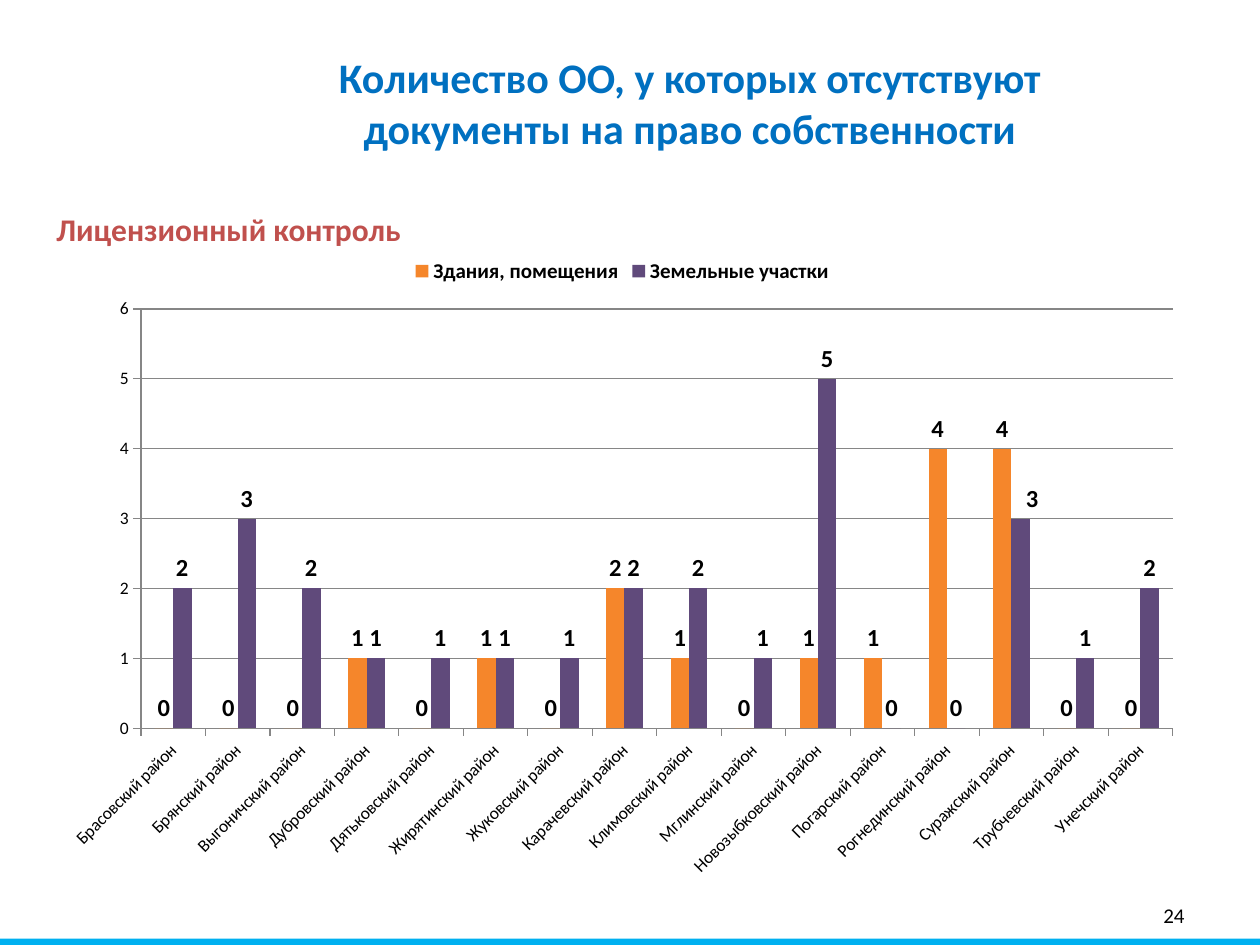
from lxml import etree
from pptx import Presentation
from pptx.chart.data import CategoryChartData
from pptx.dml.color import RGBColor
from pptx.enum.chart import (XL_CHART_TYPE, XL_LABEL_POSITION,
                             XL_LEGEND_POSITION, XL_TICK_MARK)
from pptx.enum.shapes import MSO_SHAPE
from pptx.enum.text import MSO_ANCHOR, PP_ALIGN
from pptx.oxml.ns import qn
from pptx.util import Inches, Pt

FONT = "Calibri"
BLACK = RGBColor(0x00, 0x00, 0x00)
BLUE = RGBColor(0x00, 0x70, 0xC0)
CYAN = RGBColor(0x00, 0xB0, 0xF0)
RED = RGBColor(0xC0, 0x50, 0x4D)
GREY = RGBColor(0x86, 0x86, 0x86)
ORANGE = RGBColor(0xF5, 0x86, 0x2B)
PURPLE = RGBColor(0x60, 0x4A, 0x7B)

AREAS = ["Брасовский", "Брянский", "Выгоничский", "Дубровский",
         "Дятьковский", "Жирятинский", "Жуковский", "Карачевский",
         "Климовский", "Мглинский", "Новозыбковский", "Погарский",
         "Рогнединский", "Суражский", "Трубчевский", "Унечский"]
SERIES = [
    ("Здания, помещения", ORANGE,
     [0, 0, 0, 1, 0, 1, 0, 2, 1, 0, 1, 1, 4, 4, 0, 0]),
    ("Земельные участки", PURPLE,
     [2, 3, 2, 1, 1, 1, 1, 2, 2, 1, 5, 0, 0, 3, 1, 2]),
]


def style(font, size, color=BLACK, bold=False):
    font.name = FONT
    font.size = Pt(size)
    font.bold = bold
    font.color.rgb = color


def write(frame, text, size, color, bold, align, anchor=MSO_ANCHOR.TOP):
    frame.word_wrap = True
    frame.vertical_anchor = anchor
    par = frame.paragraphs[0]
    par.alignment = align
    run = par.add_run()
    run.text = text
    style(run.font, size, color, bold)


def place(shape, box):
    shape.left, shape.top, shape.width, shape.height = box


def add_layout(parent, index, **parts):
    """Insert a manual chart layout as the given child of parent."""
    for old in parent.findall(qn("c:layout")):
        parent.remove(old)
    layout = etree.Element(qn("c:layout"))
    manual = etree.SubElement(layout, qn("c:manualLayout"))
    for name, value in parts.items():
        etree.SubElement(manual, qn("c:" + name)).set("val", str(value))
    parent.insert(index, layout)


def add_head(slide, box):
    title = slide.shapes.title
    place(title, box)
    write(title.text_frame,
          "Количество ОО, у которых отсутствуют документы на право собственности",
          24, BLUE, True, PP_ALIGN.CENTER)


def add_topic(slide, box):
    frame = slide.shapes.add_textbox(*box).text_frame
    write(frame, "Лицензионный контроль", 18, RED, True, PP_ALIGN.LEFT)


def add_foot(slide, bar_box, num_box):
    bar = slide.shapes.add_shape(MSO_SHAPE.RECTANGLE, *bar_box)
    bar.shadow.inherit = False
    bar.fill.solid()
    bar.fill.fore_color.rgb = CYAN
    bar.line.fill.background()
    frame = slide.shapes.add_textbox(*num_box).text_frame
    write(frame, "24", 12, BLACK, False, PP_ALIGN.RIGHT, MSO_ANCHOR.MIDDLE)


def add_bars(slide, box):
    data = CategoryChartData(number_format="General")
    data.categories = [f"{area} район" for area in AREAS]
    for name, _, values in SERIES:
        data.add_series(name, values)
    chart = slide.shapes.add_chart(
        XL_CHART_TYPE.COLUMN_CLUSTERED, *box, data).chart
    chart.has_title = False
    style(chart.font, 10)

    # Legend
    chart.has_legend = True
    chart.legend.position = XL_LEGEND_POSITION.TOP
    chart.legend.include_in_layout = False
    style(chart.legend.font, 12, bold=True)

    # Axes
    cat, val = chart.category_axis, chart.value_axis
    for axis in (cat, val):
        axis.major_tick_mark = XL_TICK_MARK.OUTSIDE
        axis.minor_tick_mark = XL_TICK_MARK.NONE
        axis.format.line.color.rgb = GREY
        style(axis.tick_labels.font, 10)
    val.minimum_scale, val.maximum_scale, val.major_unit = 0, 6, 1
    val.has_major_gridlines = True
    val.major_gridlines.format.line.color.rgb = GREY
    area = chart.element.find(".//" + qn("c:plotArea"))
    turn = area.find(f"{qn('c:catAx')}/{qn('c:txPr')}/{qn('a:bodyPr')}")
    turn.set("rot", "-2700000")
    turn.set("vert", "horz")
    add_layout(area, 0, layoutTarget="inner", xMode="edge", yMode="edge",
               x=0.08, y=0.1, w=0.9, h=0.65)

    # Columns and their labels
    plot = chart.plots[0]
    plot.vary_by_categories = False
    plot.gap_width = 150
    plot.overlap = 0
    for series, (_, color, _) in zip(plot.series, SERIES):
        series.format.fill.solid()
        series.format.fill.fore_color.rgb = color
        series.invert_if_negative = False
        labels = series.data_labels
        labels.show_value = True
        labels.position = XL_LABEL_POSITION.OUTSIDE_END
        style(labels.font, 14, bold=True)

    # One label stands clear of the taller column beside it
    spot = AREAS.index("Суражский")
    label = plot.series[1].points[spot].data_label
    style(label.font, 14, bold=True)
    label.position = XL_LABEL_POSITION.OUTSIDE_END
    add_layout(area.find(".//" + qn("c:dLbl")), 1, x=0.01, y=0)


def main():
    deck = Presentation()
    deck.slide_width, deck.slide_height = Inches(10), Inches(7.5)
    slide = deck.slides.add_slide(deck.slide_layouts[5])
    add_foot(slide,
             (Inches(0), Inches(7.45), Inches(10), Inches(0.05)),
             (Inches(7.17), Inches(7.06), Inches(2.33), Inches(0.4)))
    add_head(slide, (Inches(2.09), Inches(0.36), Inches(6.77), Inches(0.91)))
    add_topic(slide, (Inches(0.35), Inches(1.62), Inches(6.54), Inches(0.4)))
    add_bars(slide, (Inches(0.39), Inches(1.94), Inches(9.1), Inches(5.12)))
    deck.save("out.pptx")


if __name__ == "__main__":
    main()
